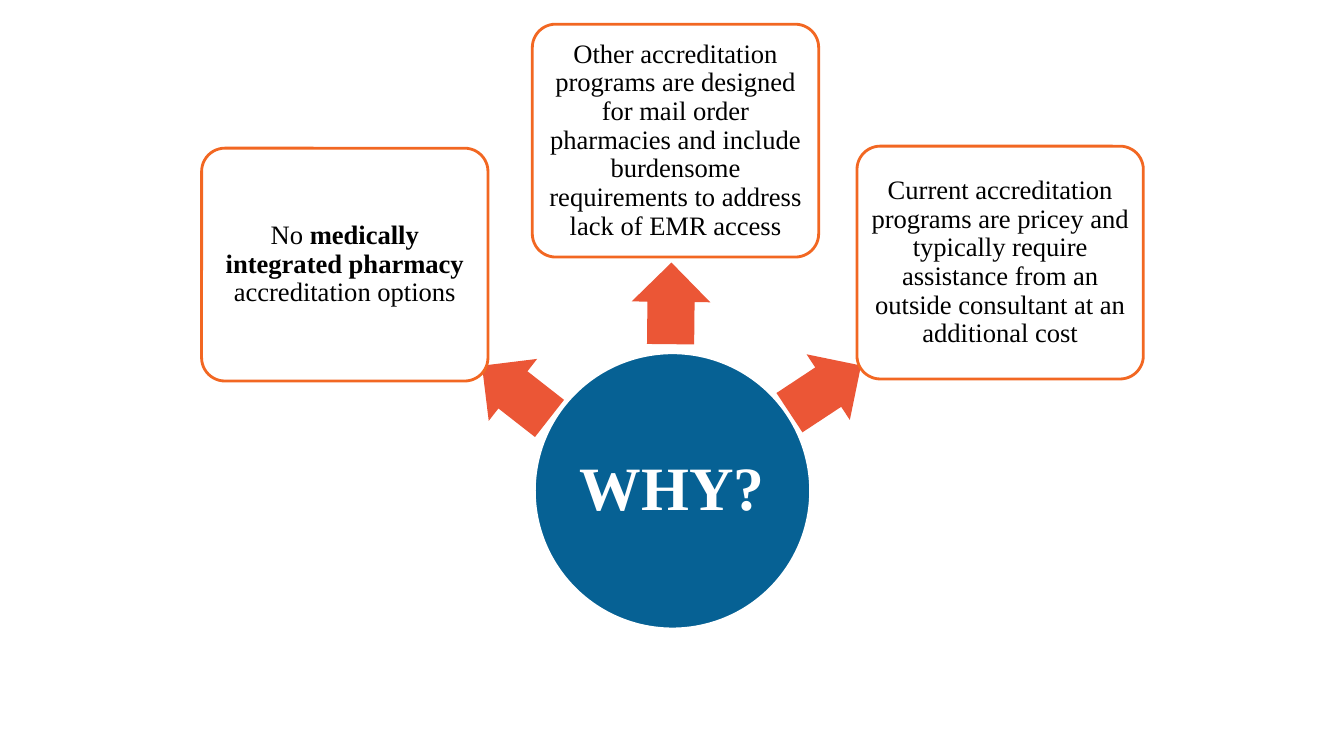
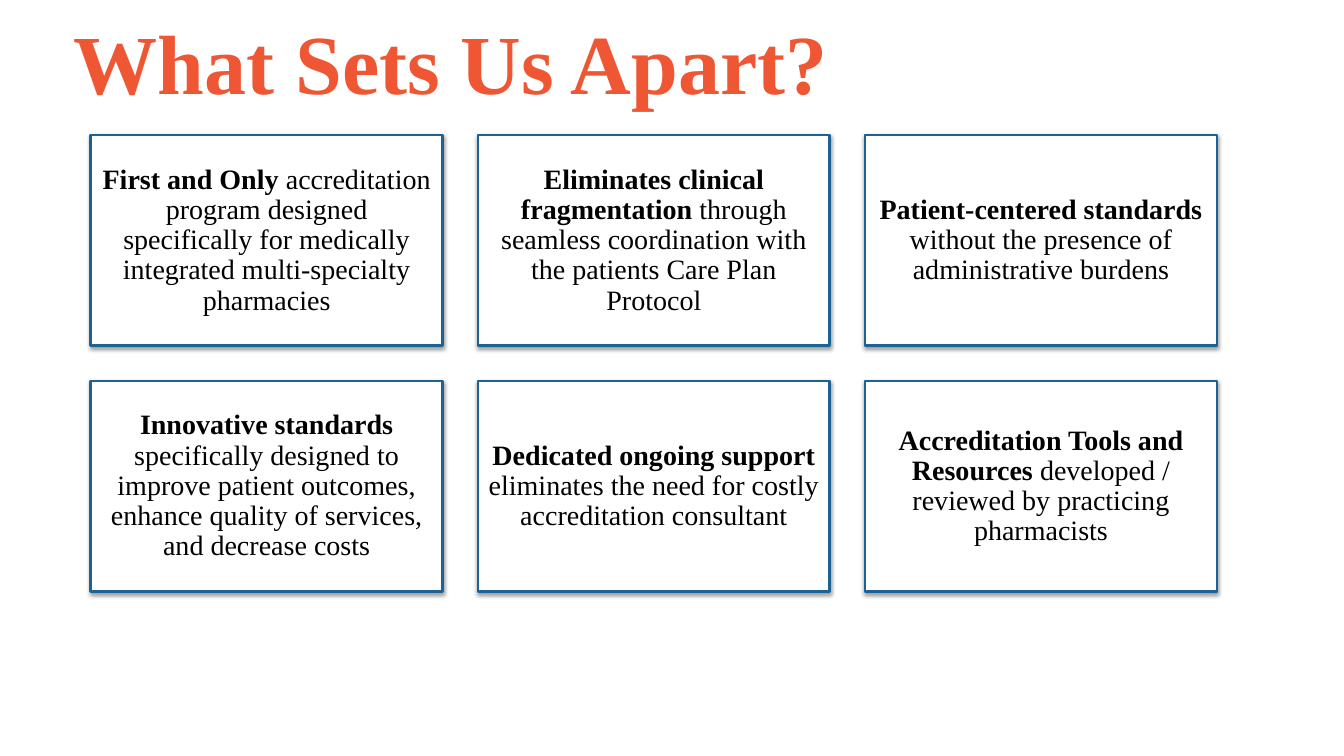
from dataclasses import dataclass

from lxml import etree
from pptx import Presentation
from pptx.dml.color import RGBColor
from pptx.enum.shapes import MSO_SHAPE
from pptx.enum.text import MSO_ANCHOR, MSO_AUTO_SIZE, PP_ALIGN
from pptx.oxml.ns import qn
from pptx.util import Inches, Pt

ELLIPSE = MSO_SHAPE.OVAL
LEFT_ARROW = MSO_SHAPE.LEFT_ARROW
ROUNDED = MSO_SHAPE.ROUNDED_RECTANGLE
RECTANGLE = MSO_SHAPE.RECTANGLE
CENTER, LEFT = PP_ALIGN.CENTER, PP_ALIGN.LEFT
MIDDLE, TOP = MSO_ANCHOR.MIDDLE, MSO_ANCHOR.TOP
NO_AUTOFIT = MSO_AUTO_SIZE.NONE
TITLE_ONLY, BLANK = 5, 6

FONT = "Times New Roman"
COLORS = {
    "white": "FFFFFF",
    "black": "000000",
    "hub": "066194",
    "arrow": "EB5636",
    "reason_border": "F26722",
    "strength_border": "1D6295",
    "title": "EF5734",
}


@dataclass(frozen=True)
class Span:
    text: str
    bold: bool = False


@dataclass(frozen=True)
class Box:
    left: float
    top: float
    width: float
    height: float

    def lengths(self) -> list:
        return [Inches(v) for v in (self.left, self.top, self.width, self.height)]


@dataclass(frozen=True)
class Look:
    preset: int
    fill: str
    border: str
    text_color: str
    size: float
    inset: float


@dataclass(frozen=True)
class Reason:
    left: float
    top: float
    arrow: Box
    angle: float
    spans: tuple


HUB = Look(ELLIPSE, "hub", "white", "white", 44, 0.03)
REASON = Look(ROUNDED, "white", "reason_border", "black", 19, 0.04)
STRENGTH = Look(RECTANGLE, "white", "strength_border", "black", 20, 0.08)

REASON_WIDTH, REASON_HEIGHT = 2.84, 2.31
REASONS = (
    Reason(2, 1.47, Box(4.69, 3.5, 0.85, 0.78), 38, (
        Span("No "),
        Span("medically integrated pharmacy ", True),
        Span("accreditation options"))),
    Reason(5.28, 0.24, Box(6.25, 2.62, 0.81, 0.78), 90.6, (
        Span("Other accreditation programs are designed for mail order pharmacies "
             "and include burdensome requirements to address lack of EMR access"),)),
    Reason(8.5, 1.45, Box(7.76, 3.47, 0.85, 0.78), 146.6, (
        Span("Current accreditation programs are pricey and typically require "
             "assistance from an outside consultant at an additional cost"),)),
)

COLUMNS = 3
GRID_LEFT, GRID_TOP = 0.9, 1.34
CARD_WIDTH, CARD_HEIGHT, GAP = 3.49, 2.09, 0.35
STRENGTHS = (
    ("First and Only ", "accreditation program designed specifically for medically "
     "integrated multi-specialty pharmacies"),
    ("Eliminates clinical fragmentation ", "through seamless coordination with the "
     "patients Care Plan Protocol"),
    ("Patient-centered standards ", "without the presence of administrative burdens"),
    ("Innovative standards ", "specifically designed to improve patient outcomes, "
     "enhance quality of services, and decrease costs"),
    ("Dedicated ongoing support", " eliminates the need for costly accreditation "
     "consultant"),
    ("Accreditation Tools and Resources ", "developed / reviewed by practicing "
     "pharmacists"),
)


def rgb(name: str) -> RGBColor:
    return RGBColor.from_string(COLORS[name])


def apply(target, values: dict) -> None:
    for attribute, value in values.items():
        setattr(target, attribute, value)


def set_margins(frame, inset: float) -> None:
    sides = ("left", "top", "right", "bottom")
    apply(frame, {f"margin_{side}": Inches(inset) for side in sides})


def write(paragraph, spans: tuple, size: float, color: str) -> None:
    for span in spans:
        run = paragraph.add_run()
        run.text = span.text
        apply(run.font, {"name": FONT, "size": Pt(size), "bold": span.bold})
        run.font.color.rgb = rgb(color)


def add_filled(slide, preset: int, box: Box, fill: str):
    shape = slide.shapes.add_shape(preset, *box.lengths())
    shape.shadow.inherit = False
    shape.fill.solid()
    shape.fill.fore_color.rgb = rgb(fill)
    return shape


def add_panel(slide, box: Box, look: Look, spans: tuple):
    panel = add_filled(slide, look.preset, box, look.fill)
    panel.line.color.rgb = rgb(look.border)
    panel.line.width = Pt(2)
    frame = panel.text_frame
    apply(frame, {"word_wrap": True, "vertical_anchor": MIDDLE})
    set_margins(frame, look.inset)
    paragraph = frame.paragraphs[0]
    apply(paragraph, {"alignment": CENTER, "line_spacing": 0.9})
    write(paragraph, spans, look.size, look.text_color)
    return panel


def add_arrow(slide, box: Box, angle: float) -> None:
    arrow = add_filled(slide, LEFT_ARROW, box, "arrow")
    arrow.line.fill.background()
    arrow.adjustments[0] = 0.6
    arrow.adjustments[1] = 0.5
    arrow.rotation = angle


def add_drop_shadow(shape) -> None:
    effects = shape._element.spPr.find(qn("a:effectLst"))
    shadow = etree.SubElement(effects, qn("a:outerShdw"), {
        "blurRad": str(Pt(3.1)), "dist": str(Pt(1.6)),
        "dir": "5400000", "rotWithShape": "0"})
    color = etree.SubElement(shadow, qn("a:srgbClr"), val=COLORS["black"])
    etree.SubElement(color, qn("a:alpha"), val="38000")


def add_title(slide, text: str) -> None:
    title = slide.shapes.title
    places = ("left", "top", "width", "height")
    apply(title, dict(zip(places, Box(0.73, 0, 11.5, 1.45).lengths())))
    frame = title.text_frame
    set_margins(frame, 0)
    apply(frame, {"word_wrap": True, "auto_size": NO_AUTOFIT,
                  "vertical_anchor": TOP, "margin_top": Inches(0.1)})
    paragraph = frame.paragraphs[0]
    paragraph.alignment = LEFT
    write(paragraph, (Span(text, True),), 60, "title")


def build_why(deck) -> None:
    slide = deck.slides.add_slide(deck.slide_layouts[BLANK])
    add_panel(slide, Box(5.3, 3.5, 2.74, 2.74), HUB, (Span("WHY?", True),))
    for reason in REASONS:
        add_arrow(slide, reason.arrow, reason.angle)
        box = Box(reason.left, reason.top, REASON_WIDTH, REASON_HEIGHT)
        panel = add_panel(slide, box, REASON, reason.spans)
        panel.adjustments[0] = 0.1


def build_strengths(deck) -> None:
    slide = deck.slides.add_slide(deck.slide_layouts[TITLE_ONLY])
    add_title(slide, "What Sets Us Apart?")
    for index, (lead, detail) in enumerate(STRENGTHS):
        row, column = divmod(index, COLUMNS)
        box = Box(GRID_LEFT + column * (CARD_WIDTH + GAP),
                  GRID_TOP + row * (CARD_HEIGHT + GAP), CARD_WIDTH, CARD_HEIGHT)
        card = add_panel(slide, box, STRENGTH, (Span(lead, True), Span(detail)))
        add_drop_shadow(card)


def main() -> None:
    deck = Presentation()
    apply(deck, {"slide_width": Inches(13.33), "slide_height": Inches(7.5)})
    build_why(deck)
    build_strengths(deck)
    deck.save("out.pptx")


if __name__ == "__main__":
    main()
